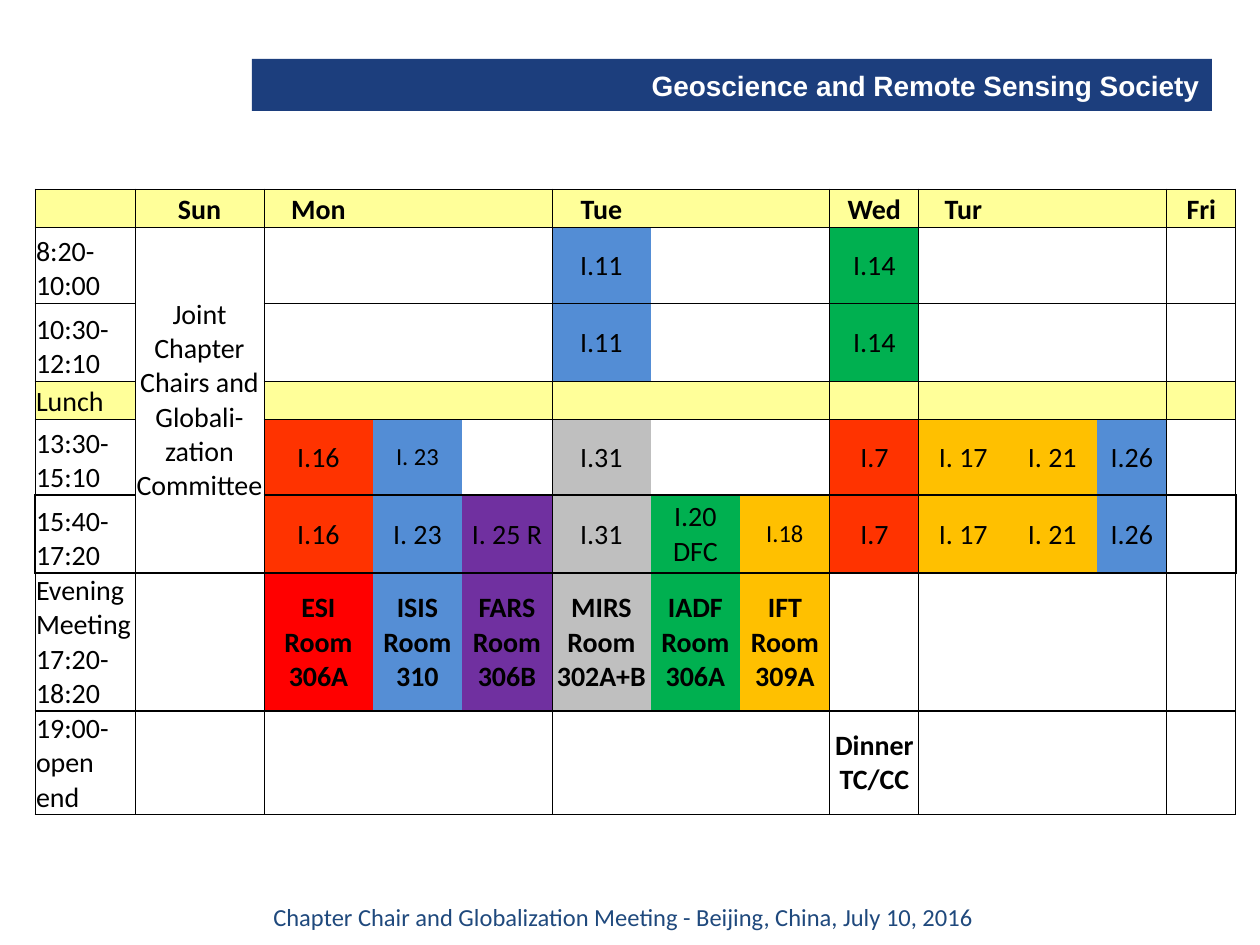
from lxml.etree import SubElement
from pptx import Presentation
from pptx.dml.color import RGBColor
from pptx.enum.shapes import MSO_SHAPE as Shape
from pptx.enum.text import MSO_ANCHOR as Anchor, PP_ALIGN as Align
from pptx.oxml.ns import qn
from pptx.util import Emu, Pt

SCALE = 914400 / 126

COLORS = {
    "navy": "1C3E7D", "footer": "1F497D", "white": "FFFFFF", "black": "000000",
    "yellow": "FFFF99", "blue": "538DD5", "sky": "558ED5", "green": "00B050",
    "orange": "FF3300", "red": "FF0000", "gray": "BFBFBF",
    "amber": "FFC000", "purple": "7030A0",
}

COLUMN_WIDTHS = [100, 129, 109, 89, 90, 99, 89, 90, 89, 89, 89, 70, 69]
ROW_HEIGHTS = [38, 76, 78, 38, 76, 78, 123, 88]
DAY_STARTS = [0, 1, 2, 5, 8, 9, 12]
DAY_ENDS = [start - 1 for start in DAY_STARTS[1:]] + [12]
YELLOW_ROWS = (0, 3)
EVENING_ROW = 6
JOINT_ROWS = range(1, 6)
HEADINGS = {1: "Sun", 2: "Mon", 5: "Tue", 8: "Wed", 9: "Tur", 12: "Fri"}
TIMES = ["", "8:20-10:00", "10:30-12:10", "Lunch", "13:30-15:10",
         "15:40-17:20", "Evening Meeting 17:20-18:20", "19:00-open end"]
JOINT_MEETING = "Joint Chapter Chairs and Globali-zation Committee"

MORNING = {5: ("I.11", "blue"), 8: ("I.14", "green")}
AFTERNOON = {
    2: ("I.16", "orange"), 3: ("I. 23", "blue"), 5: ("I.31", "gray"),
    8: ("I.7", "orange"), 9: ("I. 17", "amber"), 10: ("I. 21", "amber"),
    11: ("I.26", "blue"),
}
SESSIONS = {
    1: MORNING,
    2: MORNING,
    4: {**AFTERNOON, 6: ("", "white")},
    5: {**AFTERNOON, 4: ("I. 25 R", "purple"), 6: ("I.20 DFC", "green"),
        7: ("I.18", "amber")},
    6: {2: ("ESI\nRoom\n306A", "red"), 3: ("ISIS Room 310", "sky"),
        4: ("FARS Room 306B", "purple"), 5: ("MIRS Room\n302A+B", "gray"),
        6: ("\u00a0IADF Room\n306A".replace("\u00a0", ""), "green"),
        7: ("IFT Room 309A", "amber")},
    7: {8: ("Dinner TC/CC", None)},
}
SMALL_SESSIONS = {(4, 3), (5, 7)}


def px(length):
    return Emu(round(length * SCALE))


def rgb(name):
    return RGBColor.from_string(COLORS[name])


def write(frame, text, size=16, font="Calibri", color="black", bold=False,
          align=Align.CENTER):
    frame.text = text
    for paragraph in frame.paragraphs:
        paragraph.alignment = align
        for run in paragraph.runs:
            run.font.size = Pt(size)
            run.font.name = font
            run.font.bold = bold
            run.font.color.rgb = rgb(color)
        if not paragraph.runs:
            paragraph._p.get_or_add_endParaRPr().set("sz", str(size * 100))


def cell_content(row, column):
    if row == 0:
        return HEADINGS.get(column, ""), "yellow"
    fill = "yellow" if row in YELLOW_ROWS else None
    if column == 0:
        return TIMES[row], fill
    if (row, column) == (JOINT_ROWS[0], 1):
        return JOINT_MEETING, None
    return SESSIONS.get(row, {}).get(column, ("", fill))


def cell_borders(row, column):
    top = 1 if row > 4 else 0.5
    bottom = 1 if 4 <= row <= EVENING_ROW else 0.5
    if column == 1 and row in JOINT_ROWS:
        top = 0.5 if row == JOINT_ROWS[0] else 0
        bottom = 1 if row in (JOINT_ROWS[0], JOINT_ROWS[-1]) else 0
    left = 0.5 if column in DAY_STARTS else 0
    right = 0.5 if column in DAY_ENDS else 0
    if row == 5:
        left = 1 if column == 0 else left
        right = 1 if column == 12 else right
    return {"lnL": left, "lnR": right, "lnT": top, "lnB": bottom}


def draw_borders(cell, widths):
    properties = cell._tc.get_or_add_tcPr()
    for index, (side, width) in enumerate(widths.items()):
        line = SubElement(properties, qn(f"a:{side}"), w=str(int(Pt(width))))
        if width:
            fill = SubElement(line, qn("a:solidFill"))
            SubElement(fill, qn("a:srgbClr"), val=COLORS["black"])
        else:
            SubElement(line, qn("a:noFill"))
        properties.insert(index, line)


def format_cell(cell, row, column):
    text, fill = cell_content(row, column)
    cell.margin_left = cell.margin_right = cell.margin_top = px(1)
    cell.margin_bottom = 0
    labels = row == 0 or column == 0
    cell.vertical_anchor = Anchor.BOTTOM if labels else Anchor.MIDDLE
    write(cell.text_frame, text,
          size=14 if (row, column) in SMALL_SESSIONS else 16,
          bold=row == 0 or (row >= EVENING_ROW and column > 0),
          align=Align.LEFT if column == 0 else Align.CENTER)
    if fill:
        cell.fill.solid()
        cell.fill.fore_color.rgb = rgb(fill)
    else:
        cell.fill.background()
    draw_borders(cell, cell_borders(row, column))


def add_schedule(slide, left, top, width, height):
    schedule = slide.shapes.add_table(
        len(ROW_HEIGHTS), len(COLUMN_WIDTHS),
        px(left), px(top), px(width), px(height)).table
    schedule.first_row = schedule.horz_banding = False
    for column, column_width in zip(schedule.columns, COLUMN_WIDTHS):
        column.width = px(column_width)
    for row, row_height in zip(schedule.rows, ROW_HEIGHTS):
        row.height = px(row_height)
    schedule.cell(JOINT_ROWS[0], 1).merge(schedule.cell(JOINT_ROWS[-1], 1))
    schedule.cell(3, 2).merge(schedule.cell(3, 4))
    for row in range(len(ROW_HEIGHTS)):
        for column in range(len(COLUMN_WIDTHS)):
            format_cell(schedule.cell(row, column), row, column)


def add_banner(slide, left, top, width, height):
    banner = slide.shapes.add_shape(
        Shape.RECTANGLE, px(left), px(top), px(width), px(height))
    banner.shadow.inherit = False
    banner.fill.solid()
    banner.fill.fore_color.rgb = rgb("navy")
    banner.line.fill.background()
    banner.text_frame.word_wrap = False
    banner.text_frame.vertical_anchor = Anchor.MIDDLE
    write(banner.text_frame, "Geoscience and Remote Sensing Society",
          font="Arial", color="white", bold=True, align=Align.RIGHT)


def add_footer(slide, left, top, width, height):
    footer = slide.shapes.add_textbox(px(left), px(top), px(width), px(height))
    footer.text_frame.word_wrap = False
    write(footer.text_frame,
          "Chapter Chair and Globalization Meeting - Beijing, China, July 10, 2016",
          size=14, color="footer")


def main():
    deck = Presentation()
    deck.slide_width, deck.slide_height = px(1260), px(945)
    slide = deck.slides.add_slide(deck.slide_layouts[6])
    add_banner(slide, 252, 59, 960, 52)
    add_schedule(slide, 35, 189, sum(COLUMN_WIDTHS), sum(ROW_HEIGHTS))
    add_footer(slide, 257, 896, 733, 43)
    deck.save("out.pptx")


if __name__ == "__main__":
    main()
